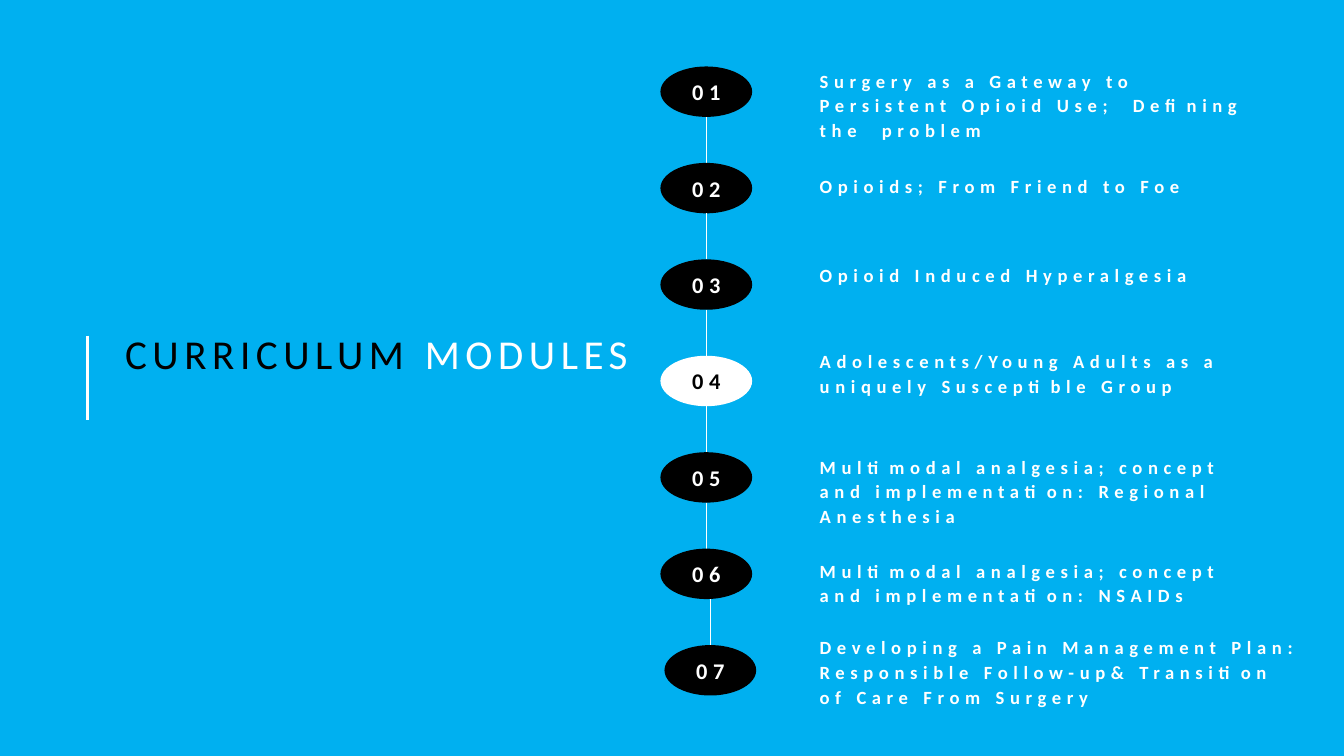
from lxml.etree import SubElement
from pptx import Presentation
from pptx.dml.color import RGBColor
from pptx.enum.shapes import MSO_CONNECTOR, MSO_SHAPE
from pptx.enum.text import MSO_ANCHOR, MSO_AUTO_SIZE, PP_ALIGN
from pptx.oxml.ns import qn
from pptx.util import Inches, Pt

BLUE, BLACK, WHITE = "00B0F0", "000000", "FFFFFF"
OVAL_WIDTH, OVAL_HEIGHT = 0.91, 0.5
FIRST_TOP, LAST_TOP = 0.66, 6.4
ACTIVE_MODULE = 4
MODULES = [
    ("Surgery as a Gateway to Persistent Opioid Use;  Defining the  problem", 6.55, 0.67, 4.34, 0.72),
    ("Opioids; From Friend to Foe", 6.55, 1.71, 4.34, 0.23),
    ("Opioid Induced Hyperalgesia", 6.55, 2.6, 4.34, 0.23),
    ("Adolescents/Young Adults as a uniquely Susceptible Group", 6.55, 3.45, 4.59, 0.47),
    ("Multimodal analgesia; concept and implementation: Regional Anesthesia", 6.55, 4.5, 4.34, 0.97),
    ("Multimodal analgesia; concept and implementation: NSAIDs", 6.55, 5.53, 4.34, 0.72),
    ("Developing a Pain Management Plan: Responsible Follow-up& Transition of Care From Surgery",
     6.59, 6.29, 4.84, 0.72),
]


def color(value):
    """Turn a hex string into a colour."""
    return RGBColor.from_string(value)


def add_run(paragraph, text, size, fill, bold=False):
    """Add a widely tracked run to a paragraph."""
    run = paragraph.add_run()
    run.text = text
    font_format = {"name": "Calibri", "size": Pt(size), "bold": bold}
    for name, value in font_format.items():
        setattr(run.font, name, value)
    run.font.color.rgb = color(fill)
    run.font._element.set("spc", "400")


def format_frame(frame, **changes):
    """Remove the insets of a text frame and set its layout."""
    frame_format = {
        "margin_left": 0, "margin_right": 0, "margin_top": 0, "margin_bottom": 0,
        "word_wrap": True, "auto_size": MSO_AUTO_SIZE.SHAPE_TO_FIT_TEXT,
        "vertical_anchor": MSO_ANCHOR.TOP,
    }
    for name, value in (frame_format | changes).items():
        setattr(frame, name, value)


def add_title(slide):
    """Place the two-coloured title in its placeholder."""
    title = slide.shapes.title
    bounds = {"left": 1.24, "top": 3.26, "width": 5.28, "height": 0.99}
    for name, value in bounds.items():
        setattr(title, name, Inches(value))
    format_frame(title.text_frame)
    paragraph = title.text_frame.paragraphs[0]
    paragraph.alignment = PP_ALIGN.LEFT
    add_run(paragraph, "CURRICULUM ", 29.3, BLACK)
    add_run(paragraph, "MODULES", 29.3, WHITE)


def add_vertical_line(slide, x, top, bottom, weight):
    """Draw a white vertical line."""
    line = slide.shapes.add_connector(
        MSO_CONNECTOR.STRAIGHT, Inches(x), Inches(top), Inches(x), Inches(bottom))
    line.line.color.rgb = color(WHITE)
    line.line.width = Pt(weight)
    SubElement(line._element.spPr, qn("a:effectLst"))


def add_number(slide, number, left, top):
    """Draw a numbered oval, inverted for the active module."""
    active = number == ACTIVE_MODULE
    oval = slide.shapes.add_shape(
        MSO_SHAPE.OVAL, Inches(left), Inches(top), Inches(OVAL_WIDTH), Inches(OVAL_HEIGHT))
    oval.shadow.inherit = False
    oval.fill.solid()
    oval.fill.fore_color.rgb = color(WHITE if active else BLACK)
    oval.line.fill.background()
    format_frame(oval.text_frame, auto_size=MSO_AUTO_SIZE.NONE, vertical_anchor=MSO_ANCHOR.MIDDLE)
    paragraph = oval.text_frame.paragraphs[0]
    paragraph.alignment = PP_ALIGN.CENTER
    add_run(paragraph, f"{number:02}", 16, BLACK if active else WHITE, bold=True)


def add_description(slide, text, top, width, height):
    """Write the description of a module."""
    box = slide.shapes.add_textbox(Inches(8.13), Inches(top), Inches(width), Inches(height))
    format_frame(box.text_frame)
    paragraph = box.text_frame.paragraphs[0]
    paragraph.line_spacing = 1.1
    add_run(paragraph, text, 13.3, WHITE, bold=True)


def main():
    """Build the curriculum slide."""
    presentation = Presentation()
    presentation.slide_width = Inches(13.33)
    presentation.slide_height = Inches(7.5)
    slide = presentation.slides.add_slide(presentation.slide_layouts[5])
    slide.background.fill.solid()
    slide.background.fill.fore_color.rgb = color(BLUE)

    add_vertical_line(slide, 0.87, 3.33, 4.17, 2.25)
    add_title(slide)
    pitch = (LAST_TOP - FIRST_TOP) / (len(MODULES) - 1)
    for index, (text, left, text_top, width, height) in enumerate(MODULES):
        top = FIRST_TOP + index * pitch
        if index:
            add_vertical_line(slide, left + OVAL_WIDTH / 2, top - pitch + OVAL_HEIGHT, top, 1)
        add_number(slide, index + 1, left, top)
        add_description(slide, text, text_top, width, height)
    presentation.save("out.pptx")


if __name__ == "__main__":
    main()
